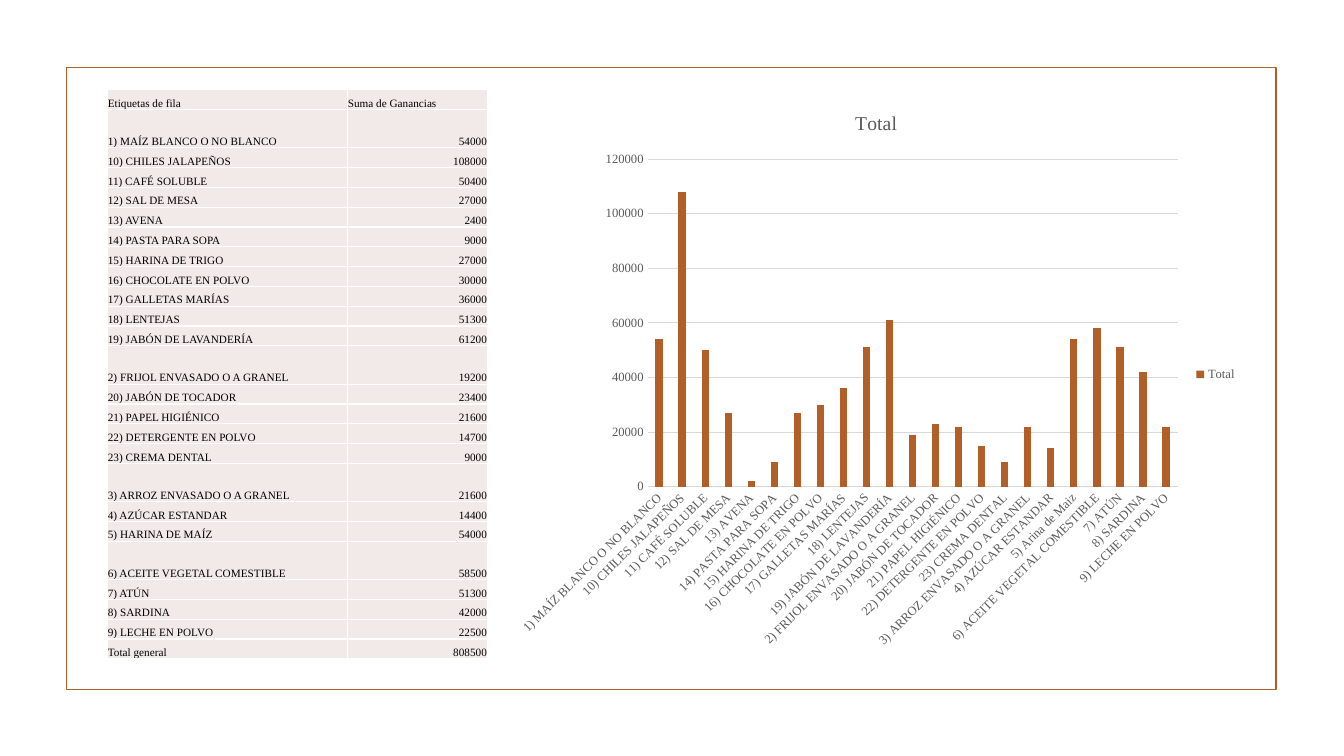
from dataclasses import dataclass

from lxml import etree
from pptx import Presentation
from pptx.chart.data import CategoryChartData
from pptx.dml.color import RGBColor
from pptx.enum.chart import XL_CHART_TYPE, XL_LEGEND_POSITION, XL_TICK_MARK
from pptx.enum.shapes import MSO_SHAPE
from pptx.enum.text import MSO_ANCHOR, PP_ALIGN
from pptx.oxml.ns import qn
from pptx.util import Inches, Pt

COLUMNS = XL_CHART_TYPE.COLUMN_CLUSTERED
LEGEND_RIGHT = XL_LEGEND_POSITION.RIGHT
NO_TICK = XL_TICK_MARK.NONE
RECTANGLE = MSO_SHAPE.RECTANGLE
BOTTOM = MSO_ANCHOR.BOTTOM
LEFT, RIGHT = PP_ALIGN.LEFT, PP_ALIGN.RIGHT


@dataclass(frozen=True)
class Theme:
    font: str = "Times New Roman"
    accent: str = "B15E28"
    cell: str = "F2EAE8"
    border: str = "FFFFFF"
    text: str = "000000"
    muted: str = "595959"
    grid: str = "D9D9D9"
    table_size: float = 8
    chart_size: float = 9
    title_size: float = 14


THEME = Theme()

HEADERS = ("Etiquetas de fila", "Suma de Ganancias")
PROFITS = {
    "1) MAÍZ BLANCO O NO BLANCO": 54000,
    "10) CHILES JALAPEÑOS": 108000,
    "11) CAFÉ SOLUBLE": 50400,
    "12) SAL DE MESA": 27000,
    "13) AVENA": 2400,
    "14) PASTA PARA SOPA": 9000,
    "15) HARINA DE TRIGO": 27000,
    "16) CHOCOLATE EN POLVO": 30000,
    "17) GALLETAS MARÍAS": 36000,
    "18) LENTEJAS": 51300,
    "19) JABÓN DE LAVANDERÍA": 61200,
    "2) FRIJOL ENVASADO O A GRANEL": 19200,
    "20) JABÓN DE TOCADOR": 23400,
    "21) PAPEL HIGIÉNICO": 21600,
    "22) DETERGENTE EN POLVO": 14700,
    "23) CREMA DENTAL": 9000,
    "3) ARROZ ENVASADO O A GRANEL": 21600,
    "4) AZÚCAR ESTANDAR": 14400,
    "5) HARINA DE MAÍZ": 54000,
    "6) ACEITE VEGETAL COMESTIBLE": 58500,
    "7) ATÚN": 51300,
    "8) SARDINA": 42000,
    "9) LECHE EN POLVO": 22500,
}
CHART_LABELS = {"5) HARINA DE MAÍZ": "5) Arina de Maiz"}

CONTENT_TOP, CONTENT_HEIGHT = 0.89, 5.65
COLUMN_WIDTHS = (2.38, 1.39)
TALL_ROW = 0.38
LONG_LABEL = 26


def style_font(font, size, color):
    font.name = THEME.font
    font.size = Pt(size)
    font.bold = False
    font.color.rgb = RGBColor.from_string(color)


def add_frame(slide):
    frame = slide.shapes.add_shape(
        RECTANGLE, Inches(0.66), Inches(0.67), Inches(12), Inches(6.17))
    frame.shadow.inherit = False
    frame.fill.background()
    frame.line.color.rgb = RGBColor.from_string(THEME.accent)
    frame.line.width = Pt(1.25)


def add_borders(cell):
    properties = cell._tc.get_or_add_tcPr()
    for side in ("a:lnL", "a:lnR", "a:lnT", "a:lnB"):
        line = etree.SubElement(properties, qn(side), w=str(Pt(1)))
        fill = etree.SubElement(line, qn("a:solidFill"))
        etree.SubElement(fill, qn("a:srgbClr"), val=THEME.border)


def fill_cell(cell, text, alignment):
    add_borders(cell)
    cell.fill.solid()
    cell.fill.fore_color.rgb = RGBColor.from_string(THEME.cell)
    cell.vertical_anchor = BOTTOM
    cell.margin_right = cell.margin_top = Inches(0.01)
    cell.margin_left = cell.margin_bottom = 0
    para = cell.text_frame.paragraphs[0]
    para.text = text
    para.alignment = alignment
    style_font(para.runs[0].font, THEME.table_size, THEME.text)


def add_profit_table(slide):
    """Add the table; long labels get tall rows, the others share the rest."""
    rows = [HEADERS, *PROFITS.items(), ("Total general", sum(PROFITS.values()))]
    tall = [len(label) >= LONG_LABEL for label, _ in rows]
    short_row = (CONTENT_HEIGHT - TALL_ROW * sum(tall)) / (len(rows) - sum(tall))
    table = slide.shapes.add_table(
        len(rows), len(HEADERS), Inches(1.07), Inches(CONTENT_TOP),
        Inches(sum(COLUMN_WIDTHS)), Inches(CONTENT_HEIGHT)).table
    table.first_row = table.horz_banding = False
    for column, width in zip(table.columns, COLUMN_WIDTHS):
        column.width = Inches(width)
    for index, (label, value) in enumerate(rows):
        table.rows[index].height = Inches(TALL_ROW if tall[index] else short_row)
        fill_cell(table.cell(index, 0), label, LEFT)
        fill_cell(table.cell(index, 1), str(value), RIGHT if index else LEFT)


def style_axes(chart):
    for axis in (chart.category_axis, chart.value_axis):
        axis.major_tick_mark = axis.minor_tick_mark = NO_TICK
        style_font(axis.tick_labels.font, THEME.chart_size, THEME.muted)
    gridlines = chart.value_axis.major_gridlines
    for line in (chart.category_axis.format.line, gridlines.format.line):
        line.color.rgb = RGBColor.from_string(THEME.grid)
        line.width = Pt(0.75)
    chart.value_axis.format.line.fill.background()
    label_body = chart.category_axis._element.find(qn("c:txPr")).find(qn("a:bodyPr"))
    label_body.set("rot", str(-45 * 60000))
    label_body.set("vert", "horz")


def add_profit_chart(slide):
    """Add the column chart, with profits rounded to thousands."""
    data = CategoryChartData()
    data.categories = [CHART_LABELS.get(label, label) for label in PROFITS]
    data.add_series("Total", [round(profit, -3) for profit in PROFITS.values()])
    chart = slide.shapes.add_chart(
        COLUMNS, Inches(5.01), Inches(CONTENT_TOP),
        Inches(7.36), Inches(CONTENT_HEIGHT), data).chart
    style_font(chart.font, THEME.chart_size, THEME.muted)
    chart.has_title = True
    title = chart.chart_title.text_frame
    title.text = "Total"
    style_font(title.paragraphs[0].runs[0].font, THEME.title_size, THEME.muted)
    chart.has_legend = True
    chart.legend.position = LEGEND_RIGHT
    chart.legend.include_in_layout = False
    style_font(chart.legend.font, THEME.chart_size, THEME.muted)
    style_axes(chart)
    plot = chart.plots[0]
    plot.vary_by_categories = False
    plot.gap_width = 219
    plot.overlap = -27
    bars = plot.series[0].format.fill
    bars.solid()
    bars.fore_color.rgb = RGBColor.from_string(THEME.accent)


def main():
    deck = Presentation()
    deck.slide_width, deck.slide_height = Inches(13.33), Inches(7.5)
    blank_layout = deck.slide_layouts[6]
    slide = deck.slides.add_slide(blank_layout)
    add_frame(slide)
    add_profit_table(slide)
    add_profit_chart(slide)
    deck.save("out.pptx")


if __name__ == "__main__":
    main()
